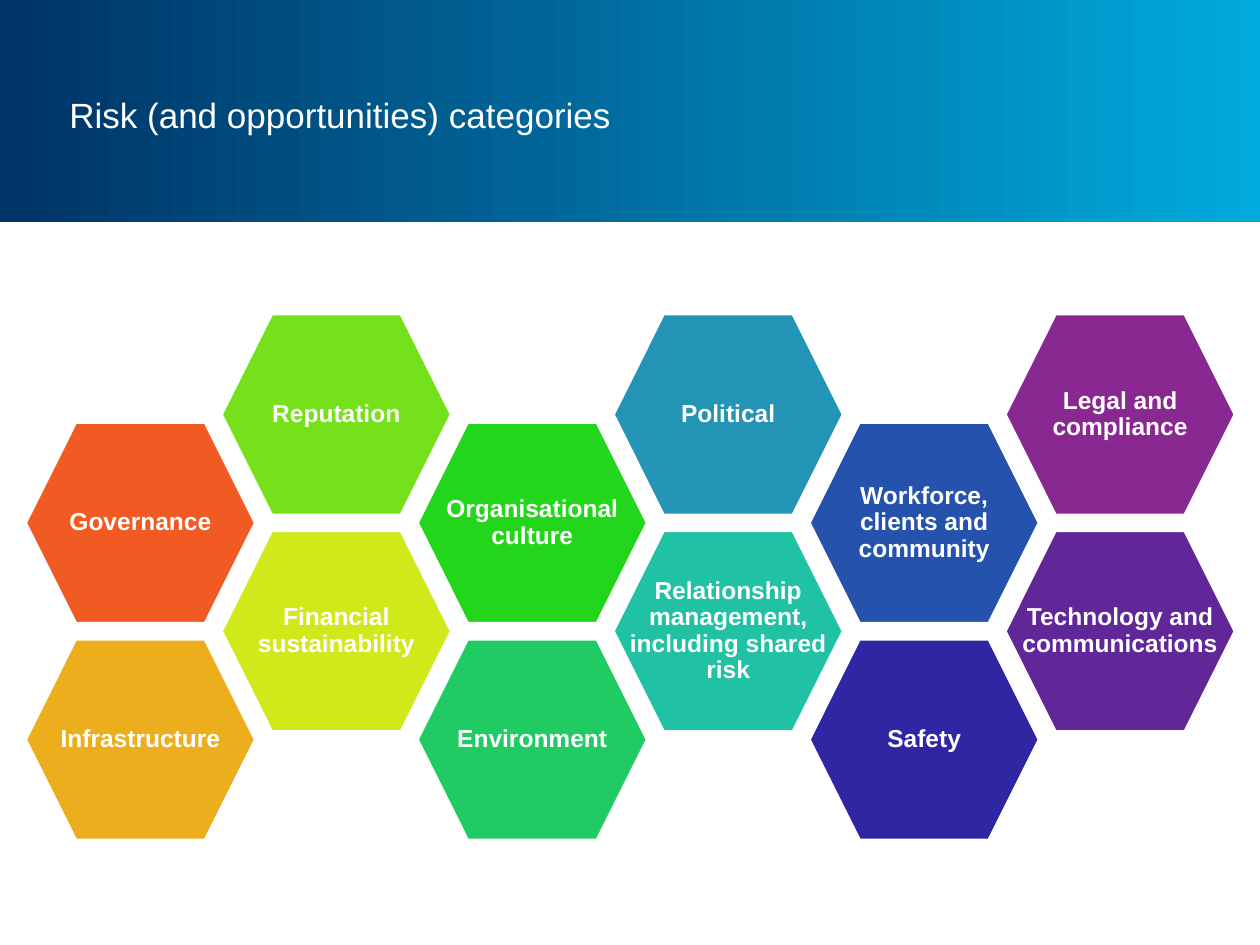
from dataclasses import dataclass

from pptx import Presentation
from pptx.dml.color import RGBColor
from pptx.enum.text import MSO_ANCHOR, MSO_AUTO_SIZE, PP_ALIGN
from pptx.util import Inches, Pt

MIDDLE = MSO_ANCHOR.MIDDLE
NO_FIT = MSO_AUTO_SIZE.NONE
LEFT, CENTER = PP_ALIGN.LEFT, PP_ALIGN.CENTER
TITLE_ONLY = 5

COLORS = {
    "white": "FFFFFF", "navy": "003366", "sky": "00AADC",
    "orange": "F15A22", "amber": "EDAE1E", "lime": "75E11A",
    "yellow": "D0E91A", "green": "23D61C", "emerald": "1FCB62",
    "steel": "2393B6", "teal": "21C1A3", "blue": "2452AC",
    "indigo": "3026A3", "plum": "892890", "violet": "612799",
}

GRID_LEFT, GRID_TOP = 0.2, 2.49
COL_PITCH, ROW_PITCH = 1.555, 0.86
HEX_W, HEX_H, HEX_CUT = 1.83, 1.6, 0.4


@dataclass
class Category:
    label: str
    color: str
    col: int
    row: int


CATEGORIES = [
    Category("Governance", "orange", 0, 1),
    Category("Infrastructure", "amber", 0, 3),
    Category("Reputation", "lime", 1, 0),
    Category("Financial sustainability", "yellow", 1, 2),
    Category("Organisational culture", "green", 2, 1),
    Category("Environment", "emerald", 2, 3),
    Category("Political", "steel", 3, 0),
    Category("Relationship management, including shared risk", "teal", 3, 2),
    Category("Workforce, clients and community", "blue", 4, 1),
    Category("Safety", "indigo", 4, 3),
    Category("Legal and compliance", "plum", 5, 0),
    Category("Technology and communications", "violet", 5, 2),
]


def rgb(name: str) -> RGBColor:
    return RGBColor.from_string(COLORS[name])


def set_text(sp, text: str, size: int, bold: bool, align, inset: float) -> None:
    tf = sp.text_frame
    frame = {"word_wrap": True, "auto_size": NO_FIT, "vertical_anchor": MIDDLE}
    for side in ("left", "right", "top", "bottom"):
        frame[f"margin_{side}"] = Inches(inset)
    for key, value in frame.items():
        setattr(tf, key, value)
    p = tf.paragraphs[0]
    p.alignment = align
    p.line_spacing = 0.9
    r = p.add_run()
    r.text = text
    font = {"name": "Arial", "size": Pt(size), "bold": bold}
    for key, value in font.items():
        setattr(r.font, key, value)
    r.font.color.rgb = rgb("white")


def add_header(s, width: int, height: int) -> None:
    band = s.shapes.add_shape(1, 0, 0, width, int(height * 0.235))
    band.shadow.inherit = False
    band.line.fill.background()
    band.fill.gradient()
    band.fill.gradient_angle = 0
    for stop, (position, name) in zip(band.fill.gradient_stops,
                                      [(0, "navy"), (1, "sky")]):
        stop.position = position
        stop.color.rgb = rgb(name)
    s.shapes._spTree.insert(2, band._element)

    title = s.shapes.title
    box = {"left": 0.051 * width, "top": 0.04 * height,
           "width": 0.748 * width, "height": 0.168 * height}
    for key, value in box.items():
        setattr(title, key, int(value))
    set_text(title, "Risk (and opportunities) categories", 20, False, LEFT, 0.04)


def add_hexagon(s, category: Category) -> None:
    x = GRID_LEFT + category.col * COL_PITCH
    y = GRID_TOP + category.row * ROW_PITCH
    outline = [
        (0, HEX_H / 2), (HEX_CUT, 0), (HEX_W - HEX_CUT, 0),
        (HEX_W, HEX_H / 2), (HEX_W - HEX_CUT, HEX_H), (HEX_CUT, HEX_H),
    ]
    points = [(Inches(x + dx), Inches(y + dy)) for dx, dy in outline]
    builder = s.shapes.build_freeform(*points[0])
    builder.add_line_segments(points[1:], close=True)
    sp = builder.convert_to_shape()
    sp.shadow.inherit = False
    sp.fill.solid()
    sp.fill.fore_color.rgb = rgb(category.color)
    sp.line.color.rgb = rgb("white")
    sp.line.width = Pt(2)
    set_text(sp, category.label, 14, True, CENTER, 0.1)


def main() -> None:
    prs = Presentation()
    prs.slide_width, prs.slide_height = Inches(10), Inches(7.5)
    s = prs.slides.add_slide(prs.slide_layouts[TITLE_ONLY])
    add_header(s, prs.slide_width, prs.slide_height)
    for category in CATEGORIES:
        add_hexagon(s, category)
    prs.save("out.pptx")


if __name__ == "__main__":
    main()
